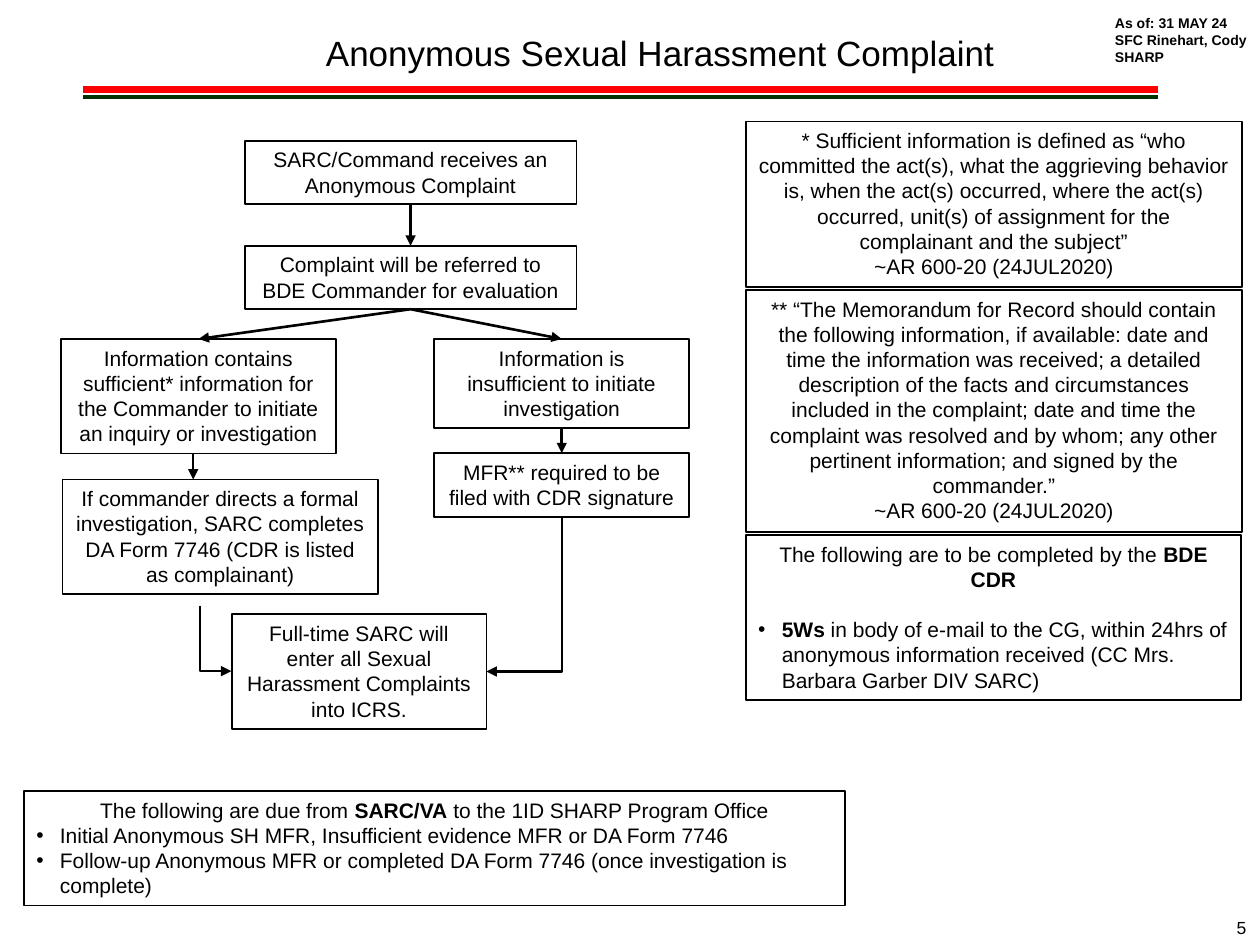
import pptx
import pptx.util
import pptx.dml.color
import pptx.enum.shapes
import pptx.enum.text
import pptx.oxml.ns
import lxml.etree

Pt = pptx.util.Pt
qn = pptx.oxml.ns.qn
PP_ALIGN = pptx.enum.text.PP_ALIGN
CONNECTOR = pptx.enum.shapes.MSO_CONNECTOR
COLORS = {"ink": "000000", "paper": "FFFFFF", "red": "FF0000", "green": "003300"}

prs = pptx.Presentation()
prs.slide_width, prs.slide_height = Pt(720), Pt(540)
s = prs.slides.add_slide(prs.slide_layouts[6])


def add_text(sp, paragraphs, size=12, align=PP_ALIGN.CENTER, wrap=True, bold=False):
    """Fill a shape; a leading bullet makes a list item, ** around words makes them bold."""
    tf = sp.text_frame
    tf.word_wrap = wrap
    tf.auto_size = pptx.enum.text.MSO_AUTO_SIZE.SHAPE_TO_FIT_TEXT
    tf.vertical_anchor = pptx.enum.text.MSO_ANCHOR.TOP
    for i, text in enumerate(paragraphs):
        p = tf.paragraphs[0] if i == 0 else tf.add_paragraph()
        p.alignment = align
        if text.startswith("•"):
            text = text[1:]
            p.alignment = PP_ALIGN.LEFT
            pPr = p._p.get_or_add_pPr()
            pPr.set("marL", str(Pt(13.5)))
            pPr.set("indent", str(Pt(-13.5)))
            lxml.etree.SubElement(pPr, qn("a:buFont")).set("typeface", "Arial")
            lxml.etree.SubElement(pPr, qn("a:buChar")).set("char", "•")
        for j, part in enumerate(text.split("[b]")):
            if part:
                r = p.add_run()
                r.text = part
                r.font.name = "Arial"
                r.font.size = Pt(size)
                r.font.bold = bold or j % 2 == 1
                r.font.color.rgb = pptx.dml.color.RGBColor.from_string(COLORS["ink"])


def add_line(x1, y1, x2, y2, color="ink", width=1.5, arrow=True, kind=CONNECTOR.STRAIGHT):
    c = s.shapes.add_connector(kind, Pt(x1), Pt(y1), Pt(x2), Pt(y2))
    c.line.color.rgb = pptx.dml.color.RGBColor.from_string(COLORS[color])
    c.line.width = Pt(width)
    if arrow:
        ln = c.line._get_or_add_ln()
        lxml.etree.SubElement(ln, qn("a:tailEnd")).set("type", "triangle")
    lxml.etree.SubElement(c._element.spPr, qn("a:effectLst"))
    return c


# Double rule under the title
add_line(47.5, 51.1, 661.7, 51.1, "red", 4, arrow=False)
add_line(47.5, 55.4, 661.7, 55.4, "green", 2.25, arrow=False)

# Flow steps and side notes: left, top, width, height, fill, paragraphs
CITATION = "~AR 600-20 (24JUL2020)"
boxes = [
    (139.8, 80.4, 189.6, 36.3, None, ["SARC/Command receives an Anonymous Complaint"]),
    (139.8, 140.4, 189.6, 36.3, None,
     ["Complaint will be referred to BDE Commander for evaluation"]),
    (248.2, 193.7, 145.6, 50.9, None,
     ["Information is insufficient to initiate investigation"]),
    (34.8, 193.7, 157.2, 65.5, None,
     ["Information contains sufficient* information for the Commander to initiate "
      "an inquiry or investigation"]),
    (248.2, 259, 145.6, 36.3, None, ["MFR** required to be filed with CDR signature"]),
    (35.7, 274, 180.3, 65.5, None,
     ["If commander directs a formal investigation, SARC completes DA Form 7746 "
      "(CDR is listed as complainant)"]),
    (132.4, 351, 145.6, 65.5, None,
     ["Full-time SARC will enter all Sexual Harassment Complaints into ICRS."]),
    (426.2, 69.4, 283.6, 94.5, "paper",
     ["* Sufficient information is defined as “who committed the act(s), what the "
      "aggrieving behavior is, when the act(s) occurred, where the act(s) occurred, "
      "unit(s) of assignment for the complainant and the subject”", CITATION]),
    (426.2, 165.7, 283.6, 138.2, "paper",
     ["** “The Memorandum for Record should contain the following information, if "
      "available: date and time the information was received; a detailed description "
      "of the facts and circumstances included in the complaint; date and time the "
      "complaint was resolved and by whom; any other pertinent information; and "
      "signed by the commander.”", CITATION]),
    (426.2, 305.7, 283, 94.5, None,
     ["The following are to be completed by the [b]BDE CDR[b]",
      "•[b]5Ws[b] in body of e-mail to the CG, within 24hrs of anonymous information "
      "received (CC Mrs. Barbara Garber DIV SARC)"]),
    (13.7, 452, 469.2, 65.5, None,
     ["The following are due from [b]SARC/VA[b] to the 1ID SHARP Program Office",
      "•Initial Anonymous SH MFR, Insufficient evidence MFR or DA Form 7746",
      "•Follow-up Anonymous MFR or completed DA Form 7746 (once investigation is "
      "complete)"]),
]
for left, top, width, height, fill, paragraphs in boxes:
    sp = s.shapes.add_shape(pptx.enum.shapes.MSO_SHAPE.RECTANGLE,
                            Pt(left), Pt(top), Pt(width), Pt(height))
    sp.shadow.inherit = False
    if fill:
        sp.fill.solid()
        sp.fill.fore_color.rgb = pptx.dml.color.RGBColor.from_string(COLORS[fill])
    else:
        sp.fill.background()
    sp.line.color.rgb = pptx.dml.color.RGBColor.from_string(COLORS["ink"])
    sp.line.width = Pt(1)
    add_text(sp, paragraphs)
    # One open line between the commander's heading and its task
    if "BDE CDR" in paragraphs[0]:
        sp.text_frame.paragraphs[1].space_before = Pt(14.4)

# Straight arrows between steps
for x1, y1, x2, y2 in [
    (234.6, 116.7, 234.6, 140.4),
    (234.6, 176.7, 321, 193.7),
    (234.6, 176.7, 113.5, 193.7),
    (321, 244.6, 321, 259),
    (110.4, 259.7, 110.4, 274),
]:
    add_line(x1, y1, x2, y2)

# Elbow arrows into the last step: frame before turning, then the turn in degrees
for x1, y1, x2, y2, turn in [
    (255.3, 317.9, 343.7, 361.1, 90),
    (141.9, 355.8, 104.5, 373.8, 270),
]:
    c = add_line(x1, y1, x2, y2, kind=CONNECTOR.ELBOW)
    c._element.spPr.find(qn("a:prstGeom")).set("prst", "bentConnector2")
    c._element.spPr.find(qn("a:xfrm")).set("rot", str(turn * 60000))

# Title, date block and page number
for left, top, width, height, paragraphs, size, align, wrap, bold in [
    (17.3, 14.6, 720, 31.5, ["Anonymous Sexual Harassment Complaint"],
     20, PP_ALIGN.CENTER, True, False),
    (630, 5, 90.5, 36.3, ["As of: 31 MAY 24", "SFC Rinehart, Cody", "SHARP"],
     8, PP_ALIGN.LEFT, False, True),
    (679, 520.6, 40.3, 19.4, ["5"], 10, PP_ALIGN.RIGHT, True, False),
]:
    sp = s.shapes.add_textbox(Pt(left), Pt(top), Pt(width), Pt(height))
    add_text(sp, paragraphs, size, align, wrap, bold)

prs.save("out.pptx")
